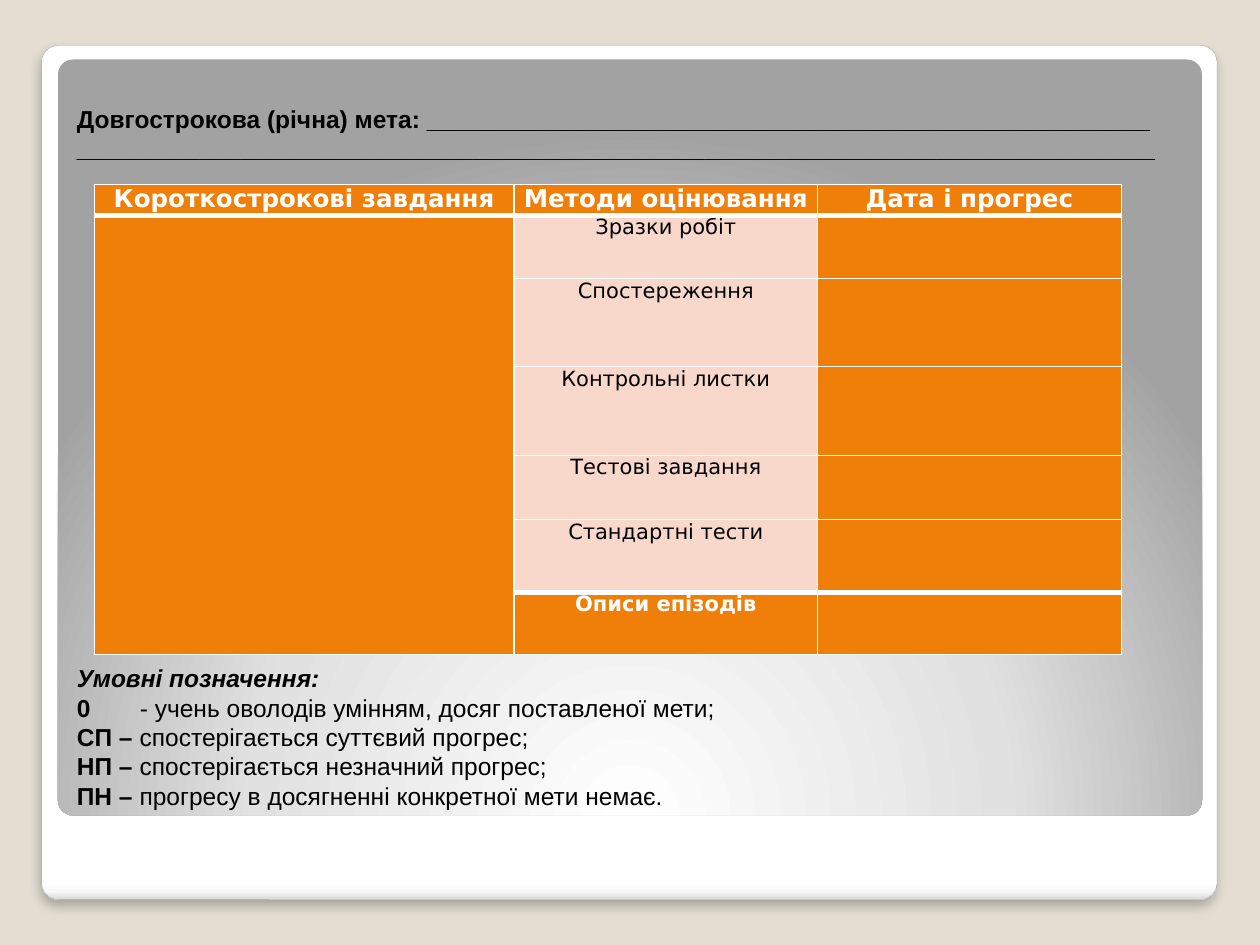
import pptx
import pptx.dml.color
import pptx.enum.shapes
import pptx.enum.text
import pptx.oxml
import pptx.oxml.ns
import pptx.util

THEME = {
    "background": "E3DED1", "outline": "A4A4A4", "accent": "F07F09",
    "tint": "F9D8CC", "light": "FFFFFF", "dark": "000000",
    "text_font": "Arial", "table_font": "DejaVu Sans",
    "text_size": 14, "cell_size": 12, "line_pitch": 16.8,
    "thin": 1, "thick": 3,
}
NAMESPACE = pptx.oxml.ns.nsdecls("a")
COLOR = {name: pptx.dml.color.RGBColor.from_string(THEME[name])
         for name in ("background", "outline", "accent", "tint", "light", "dark")}

presentation = pptx.Presentation()
presentation.slide_width = pptx.util.Inches(10)
presentation.slide_height = pptx.util.Inches(7.5)
slide = presentation.slides.add_slide(presentation.slide_layouts[1])
slide.background.fill.solid()
slide.background.fill.fore_color.rgb = COLOR["background"]


def percent(left, top, width, height):
    horizontal = presentation.slide_width / 100
    vertical = presentation.slide_height / 100
    return (int(left * horizontal), int(top * vertical),
            int(width * horizontal), int(height * vertical))


def style(paragraph, font_name, size, color, bold=None):
    paragraph.font.name = font_name
    paragraph.font.size = pptx.util.Pt(size)
    paragraph.font.color.rgb = COLOR[color]
    paragraph.font.bold = bold


card_stops = [(0, "FFFFFF"), (98, "FFFFFF"), (99, "F7F7F7"), (100, "DADADA")]
panel_stops = [(0, "FFFFFF"), (55, "E1E1E1"), (100, "A2A2A2")]
backdrops = [
    (percent(3.3, 4.8, 93.3, 90.4), card_stops, '<a:lin ang="5400000" scaled="0"/>'),
    (percent(4.6, 6.3, 90.8, 80), panel_stops,
     '<a:path path="circle"><a:fillToRect l="50000" t="175000" r="50000" b="-75000"/></a:path>'),
]
frames = []
for box, stops, direction in backdrops:
    frame = slide.shapes.add_shape(pptx.enum.shapes.MSO_SHAPE.ROUNDED_RECTANGLE, *box)
    frame.adjustments[0] = 0.02
    frame.shadow.inherit = False
    frame.line.fill.background()
    stop_list = "".join(f'<a:gs pos="{position * 1000}"><a:srgbClr val="{color}"/></a:gs>'
                        for position, color in stops)
    frame.element.spPr.find(pptx.oxml.ns.qn("a:prstGeom")).addnext(pptx.oxml.parse_xml(
        f'<a:gradFill {NAMESPACE} rotWithShape="1"><a:gsLst>{stop_list}</a:gsLst>{direction}</a:gradFill>'))
    frames.append(frame)

card = frames[0]
card.line.color.rgb = COLOR["outline"]
card.line.width = pptx.util.Pt(0.16)
card.element.spPr.find(pptx.oxml.ns.qn("a:effectLst")).append(pptx.oxml.parse_xml(
    f'<a:outerShdw {NAMESPACE} blurRad="76200" dist="50800" dir="5400000" algn="tl" rotWithShape="0">'
    f'<a:srgbClr val="{THEME["dark"]}"><a:alpha val="25000"/></a:srgbClr></a:outerShdw>'))

headers = ["Короткострокові завдання", "Методи оцінювання", "Дата і прогрес"]
methods = ["Зразки робіт", "Спостереження", "Контрольні листки",
           "Тестові завдання", "Стандартні тести", "Описи епізодів"]
column_shares = [33.3, 24.1, 24.1]
row_shares = [3.3, 6.7, 9.3, 9.4, 6.8, 7.7, 6.6]
last_row = len(methods)
table = slide.shapes.add_table(
    len(row_shares), len(column_shares),
    *percent(7.5, 19.5, sum(column_shares), sum(row_shares))).table
for column, share in zip(table.columns, column_shares):
    column.width = percent(0, 0, share, 0)[2]
for row, share in zip(table.rows, row_shares):
    row.height = percent(0, 0, 0, share)[3]
table.cell(1, 0).merge(table.cell(last_row, 0))

for row_index in range(len(row_shares)):
    for column_index in range(len(column_shares)):
        cell = table.cell(row_index, column_index)
        if cell.is_spanned:
            continue
        is_method = column_index == 1 and 0 < row_index < last_row
        cell.fill.solid()
        cell.fill.fore_color.rgb = COLOR["tint" if is_method else "accent"]
        cell.margin_left = cell.margin_right = pptx.util.Inches(0.07)
        cell.margin_top = cell.margin_bottom = 0
        thick_top = row_index == 1 or (row_index == last_row and column_index > 0)
        thick_bottom = row_index == 0 or (row_index == last_row - 1 and column_index > 0)
        edges = [("lnL", False), ("lnR", False), ("lnT", thick_top), ("lnB", thick_bottom)]
        properties = cell._tc.get_or_add_tcPr()
        for position, (edge, is_thick) in enumerate(edges):
            width = pptx.util.Pt(THEME["thick" if is_thick else "thin"])
            properties.insert(position, pptx.oxml.parse_xml(
                f'<a:{edge} {NAMESPACE} w="{width}"><a:solidFill>'
                f'<a:srgbClr val="{THEME["light"]}"/></a:solidFill></a:{edge}>'))
        if row_index == 0:
            cell.text = headers[column_index]
        elif column_index == 1:
            cell.text = methods[row_index - 1]
        paragraph = cell.text_frame.paragraphs[0]
        paragraph.alignment = pptx.enum.text.PP_ALIGN.CENTER
        style(paragraph, THEME["table_font"],
              THEME["text_size" if row_index == 0 else "cell_size"],
              "dark" if is_method else "light", not is_method)

goal = [[("Довгострокова (річна) мета: " + "_" * 53, True)], [("_" * 79, True)]]
legend = [
    [("Умовні позначення:", True)],
    [("0", True), ("\t- учень оволодів умінням, досяг поставленої мети;", False)],
    [("СП – ", True), ("спостерігається суттєвий прогрес;", False)],
    [("НП – ", True), ("спостерігається незначний прогрес;", False)],
    [("ПН – ", True), ("прогресу в досягненні конкретної мети немає.", False)],
]
title, body = slide.shapes.title, slide.placeholders[1]
blocks = [(title, percent(5.1, 10.3, 88.2, 7.6), goal),
          (body, percent(5.1, 69.5, 88.2, 17), legend)]
for placeholder, box, lines in blocks:
    placeholder.left, placeholder.top, placeholder.width, placeholder.height = box
    placeholder.element.getparent().append(placeholder.element)
    text_frame = placeholder.text_frame
    text_frame.word_wrap = True
    text_frame.auto_size = pptx.enum.text.MSO_AUTO_SIZE.NONE
    text_frame.vertical_anchor = pptx.enum.text.MSO_ANCHOR.TOP
    for index, line in enumerate(lines):
        paragraph = text_frame.paragraphs[0] if index == 0 else text_frame.add_paragraph()
        paragraph.alignment = pptx.enum.text.PP_ALIGN.LEFT
        paragraph.space_before = paragraph.space_after = pptx.util.Pt(0)
        paragraph.line_spacing = pptx.util.Pt(THEME["line_pitch"])
        properties = paragraph._p.get_or_add_pPr()
        properties.set("marL", "0")
        properties.set("indent", "0")
        properties.append(pptx.oxml.parse_xml(f"<a:buNone {NAMESPACE}/>"))
        properties.append(pptx.oxml.parse_xml(
            f'<a:tabLst {NAMESPACE}><a:tab pos="{pptx.util.Inches(0.38)}" algn="l"/></a:tabLst>'))
        style(paragraph, THEME["text_font"], THEME["text_size"], "dark")
        for text, is_bold in line:
            run = paragraph.add_run()
            run.text = text
            run.font.bold = is_bold
body.text_frame.paragraphs[0].font.italic = True

presentation.save("out.pptx")
